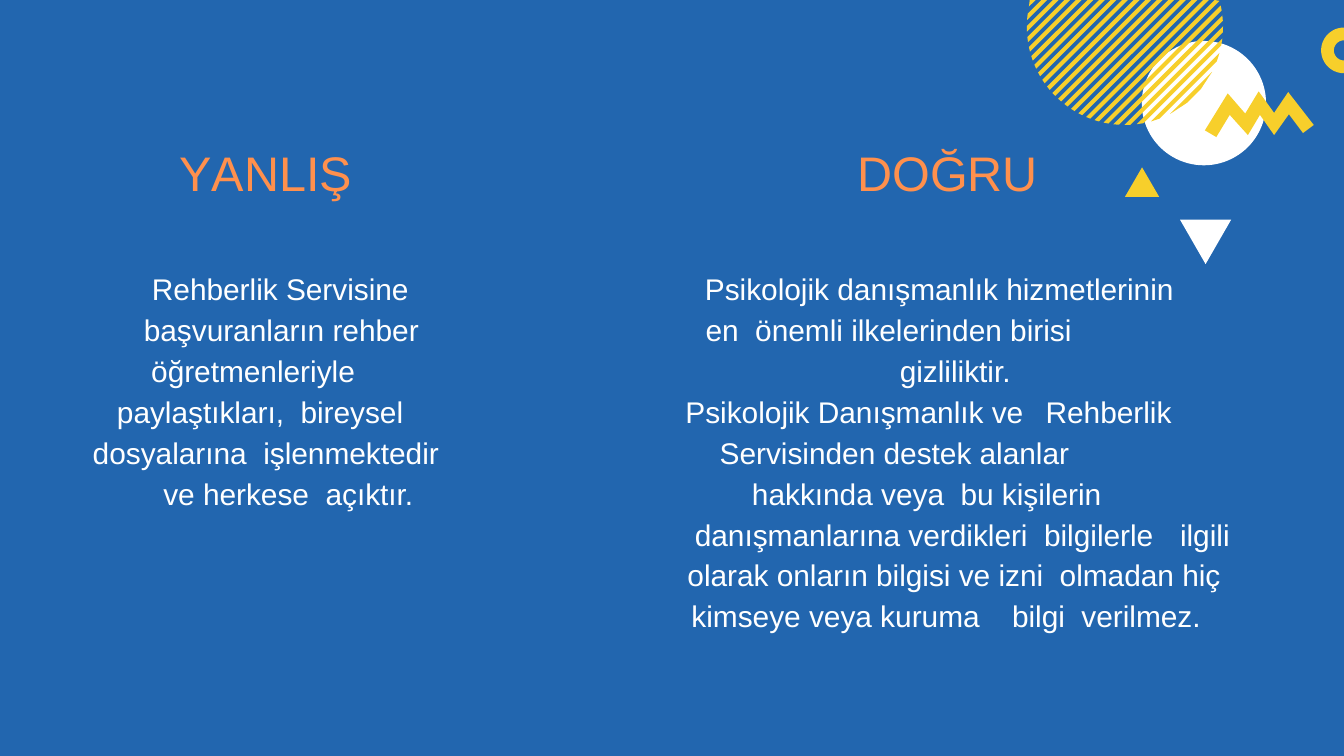
from math import cos, pi, sin, sqrt

from lxml import etree
from pptx import Presentation
from pptx.dml.color import RGBColor
from pptx.enum.shapes import MSO_SHAPE
from pptx.oxml.ns import qn
from pptx.util import Inches, Pt

OVAL, TRIANGLE = MSO_SHAPE.OVAL, MSO_SHAPE.ISOSCELES_TRIANGLE
RECTANGLE = MSO_SHAPE.RECTANGLE

# Content
WIDTH, HEIGHT = 20, 11.25
BLUE, YELLOW, WHITE, ORANGE = "2266AF", "F7CF2B", "FFFFFF", "FF904D"
HEADING_TOP, BODY_TOP = 2.12, 3.95

# heading: runs of (text, letter spacing); body: lines of (start, text)
WRONG = [("Y", -20), ("ANLIŞ", 0)], [
    (0.89, "Rehberlik Servisine"),
    (0.77, "başvuranların rehber"),
    (0.88, "öğretmenleriyle"),
    (0.37, "paylaştıkları,  bireysel"),
    (0.01, "dosyalarına  işlenmektedir"),
    (1.06, "ve herkese  açıktır."),
]
RIGHT = [("DOĞRU", -5)], [
    (0.43, "Psikolojik danışmanlık hizmetlerinin"),
    (0.44, "en  önemli ilkelerinden birisi"),
    (3.33, "gizliliktir."),
    (0.14, "Psikolojik Danışmanlık ve\tRehberlik"),
    (0.65, "Servisinden destek alanlar"),
    (1.13, "hakkında veya  bu kişilerin"),
    (0.28, "danışmanlarına verdikleri  bilgilerle\tilgili"),
    (0.17, "olarak onların bilgisi ve izni  olmadan hiç"),
    (0.23, "kimseye veya kuruma\tbilgi  verilmez."),
]
TAB_STOPS = (5.24, 6.14, 7.27)
# column, heading (left, width), body (left, width, height)
COLUMNS = [
    (WRONG, (2.66, 2.6), (1.37, 5.79, 3.71)),
    (RIGHT, (12.75, 2.72), (10.06, 8.31, 4.93)),
]

# Ornaments
ZIGZAG = [(18.73, 1.36), (18.53, 1.69), (18.27, 1.39), (17.93, 1.94),
          (18.1, 2.04), (18.3, 1.71), (18.57, 2.01), (18.75, 1.71),
          (18.96, 2.01), (19.18, 1.7), (19.39, 1.98), (19.55, 1.86),
          (19.17, 1.37), (18.96, 1.68)]
RING_Y, RING_OUTER, RING_INNER = 0.75, 0.34, 0.15
DISC_X, DISC_Y, DISC_RADIUS = 16.74, 0.4, 1.46
STRIPE_COUNT, STRIPE_PITCH, FIRST_STRIPE = 23, 0.172, 15.324

prs = Presentation()
prs.slide_width, prs.slide_height = Inches(WIDTH), Inches(HEIGHT)
slide = prs.slides.add_slide(prs.slide_layouts[6])


def rgb(color):
    return RGBColor.from_string(color)


def paint(shape, color):
    shape.shadow.inherit = False
    shape.fill.solid()
    shape.fill.fore_color.rgb = rgb(color)
    shape.line.fill.background()


def add_preset(kind, color, box, rotation=0):
    shape = slide.shapes.add_shape(kind, *map(Inches, box))
    shape.rotation = rotation
    paint(shape, color)


def add_outline(contours, color):
    contours = [[(Inches(x), Inches(y)) for x, y in c] for c in contours]
    builder = slide.shapes.build_freeform(*contours[0][0], scale=1.0)
    for number, points in enumerate(contours):
        if number:
            builder.move_to(*points[0])
        builder.add_line_segments(points[1:], close=True)
    paint(builder.convert_to_shape(), color)


def add_text(lines, box, size, color, spacing=1.0, before=0):
    """Each line is (start, runs); each run is (text, letter spacing)."""
    frame = slide.shapes.add_textbox(*map(Inches, box)).text_frame
    frame.word_wrap = True
    frame.margin_left = frame.margin_right = frame.margin_bottom = 0
    frame.margin_top = Inches(0.01)
    for number, (start, runs) in enumerate(lines):
        par = frame.add_paragraph() if number else frame.paragraphs[0]
        par.line_spacing, par.space_before = spacing, Pt(before)
        props = par._p.get_or_add_pPr()
        props.set("marL", "0")
        props.set("indent", str(Inches(start)))
        if any("\t" in text for text, _ in runs):
            stops = etree.SubElement(props, qn("a:tabLst"))
            for tab in TAB_STOPS:
                etree.SubElement(stops, qn("a:tab"),
                                 pos=str(Inches(tab)), algn="l")
        for text, letter_spacing in runs:
            run = par.add_run()
            run.text = text
            run.font.name, run.font.size = "Arial", Pt(size)
            run.font.color.rgb = rgb(color)
            run._r.get_or_add_rPr().set("spc", str(letter_spacing))


def arc(radius, steps=24):
    """Left half of a circle centred on the slide's right edge."""
    angles = [pi / 2 + pi * i / steps for i in range(steps + 1)]
    return [(WIDTH + radius * cos(a), RING_Y - radius * sin(a)) for a in angles]


def chord(total):
    """Ends of the disc's chord x + y = total, cut at the slide's top."""
    middle = (total - DISC_X - DISC_Y) / 2
    half = sqrt(max(DISC_RADIUS ** 2 / 2 - middle ** 2, 0))
    ends = []
    for sign in (1, -1):
        y = max(DISC_Y + middle + sign * half, 0)
        ends.append((total - y, y))
    return ends


# Background
add_preset(RECTANGLE, BLUE, (0, 0, WIDTH, HEIGHT))

# White disc, zigzag, ring and triangles
add_preset(OVAL, WHITE, (16.99, 0.61, 1.85, 1.85))
add_outline([ZIGZAG], YELLOW)
add_outline([arc(RING_OUTER) + arc(RING_INNER)[::-1]], YELLOW)
add_preset(TRIANGLE, YELLOW, (16.74, 2.49, 0.51, 0.44))
add_preset(TRIANGLE, WHITE, (17.56, 3.27, 0.76, 0.66), rotation=180)

# Striped disc
starts = [FIRST_STRIPE + STRIPE_PITCH * i for i in range(STRIPE_COUNT)]
add_outline([chord(s) + chord(s + STRIPE_PITCH / 2)[::-1] for s in starts],
            YELLOW)

# Headings and bodies
for (heading, body), (head_x, head_w), (body_x, body_w, body_h) in COLUMNS:
    add_text([(0.01, heading)], (head_x, HEADING_TOP, head_w, 0.9),
             52, ORANGE, before=1)
    add_text([(start, [(text, -5)]) for start, text in body],
             (body_x, BODY_TOP, body_w, body_h), 32, WHITE, spacing=1.14)

prs.save("out.pptx")
